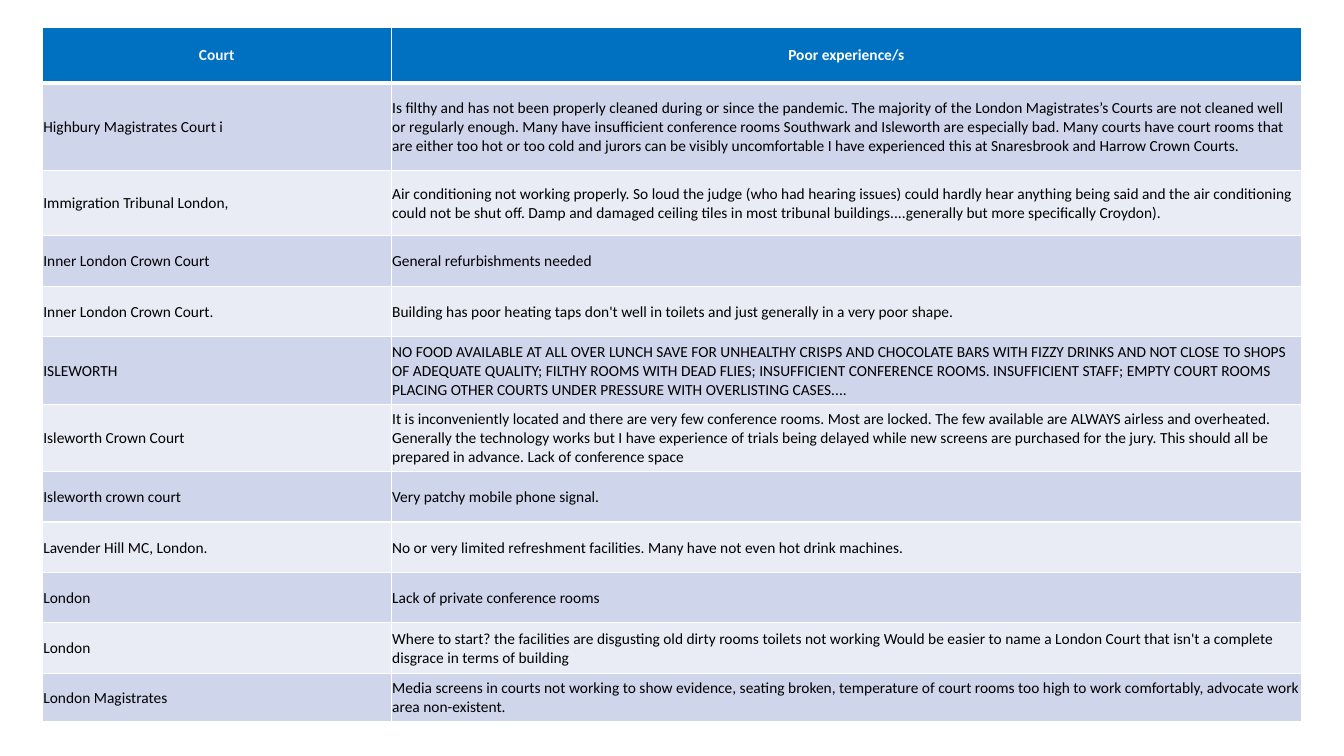
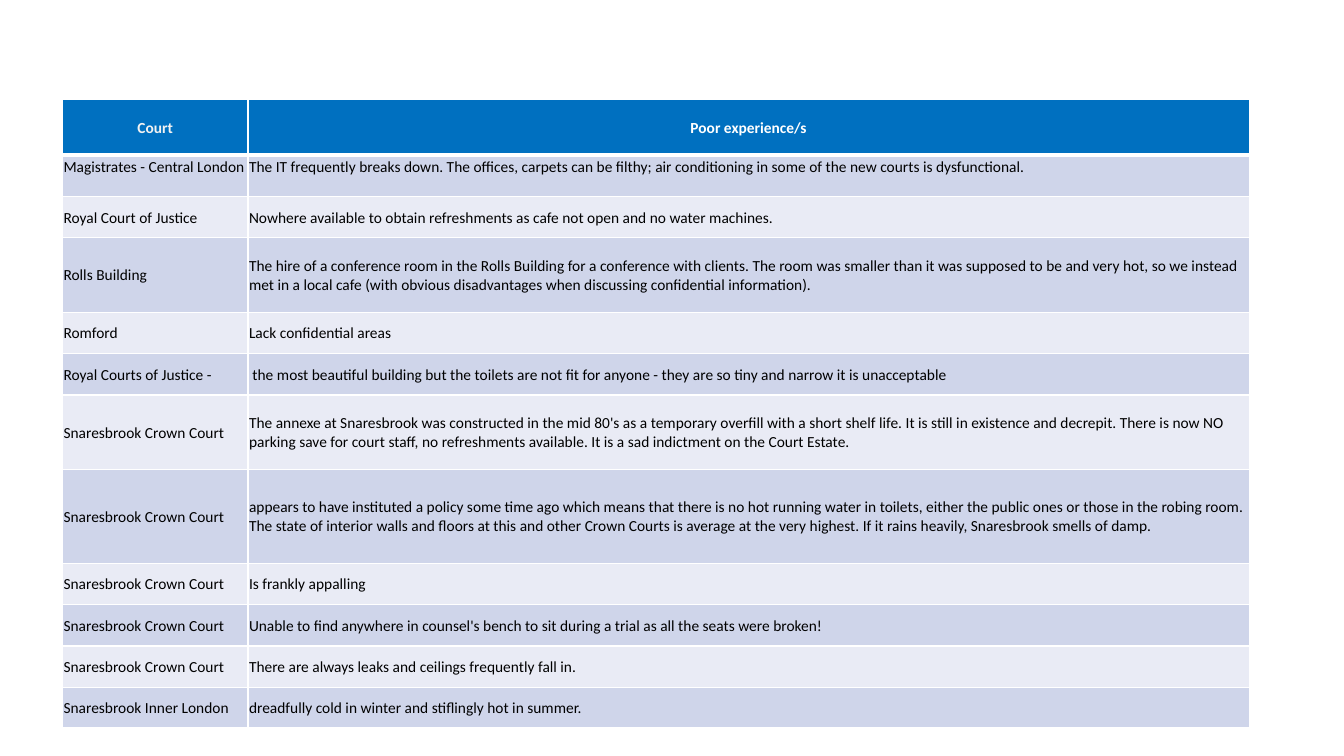
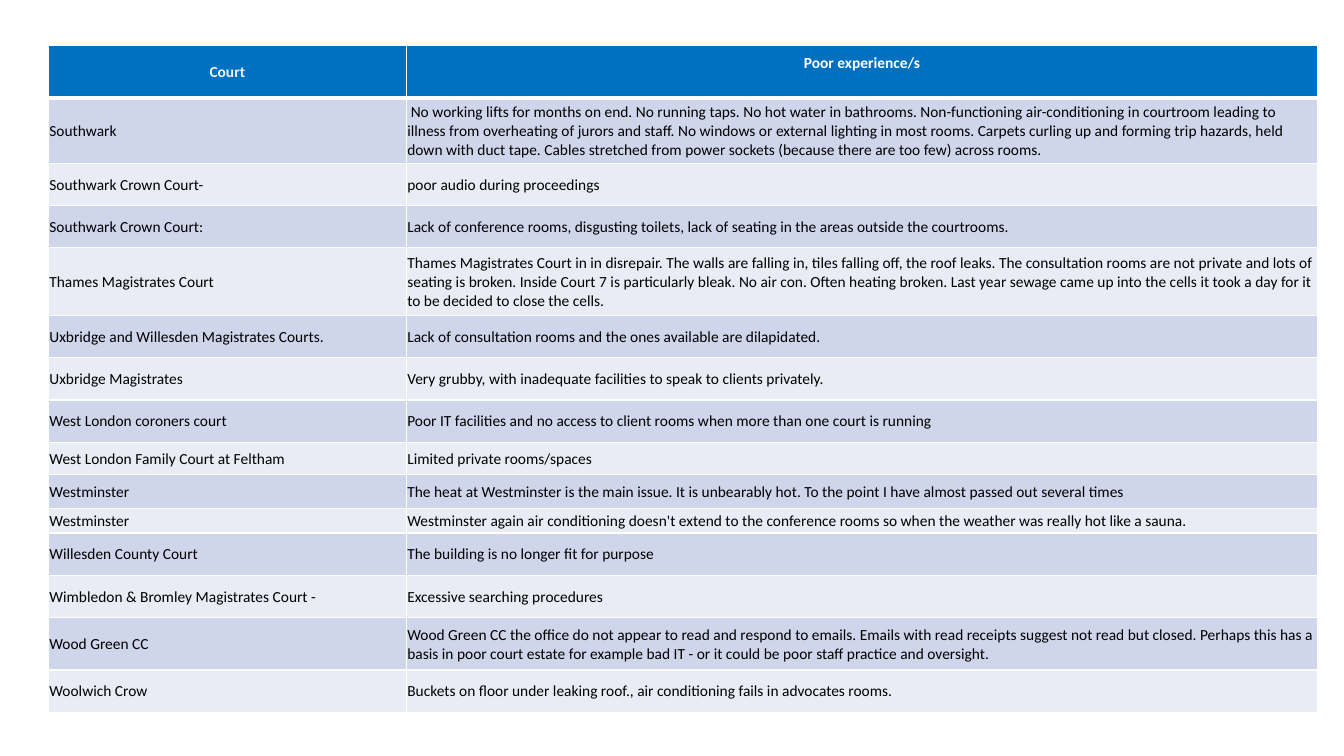
"""Build three slides that list poor experiences at London courts."""
from lxml import etree
from pptx import Presentation
from pptx import util as u
from pptx.dml.color import RGBColor
from pptx.enum import text
from pptx.oxml import ns

BLUE = RGBColor(0x00, 0x70, 0xC0)
DARK = RGBColor(0xCF, 0xD5, 0xEA)
LIGHT = RGBColor(0xE9, 0xEB, 0xF5)
WHITE = RGBColor(0xFF, 0xFF, 0xFF)
PALE = RGBColor(0xF2, 0xF2, 0xF2)
BLACK = RGBColor(0x00, 0x00, 0x00)
HEAD = ("Court", "Poor experience/s")

FIRST = [
    (0.87, "Highbury Magistrates Court i", "Is filthy and has not been properly cleaned during or since the pandemic. The majority of the London Magistrates’s Courts are not cleaned well or regularly enough. Many have insufficient conference rooms Southwark and Isleworth are especially bad. Many courts have court rooms that are either too hot or too cold and jurors can be visibly uncomfortable I have experienced this at Snaresbrook and Harrow Crown Courts."),
    (0.65, "Immigration Tribunal London,", "Air conditioning not working properly. So loud the judge (who had hearing issues) could hardly hear anything being said and the air conditioning could not be shut off. Damp and damaged ceiling tiles in most tribunal buildings....generally but more specifically Croydon)."),
    (0.5, "Inner London Crown Court", "General refurbishments needed"),
    (0.5, "Inner London Crown Court.", "Building has poor heating taps don't well in toilets and just generally in a very poor shape."),
    (0.67, "ISLEWORTH", "NO FOOD AVAILABLE AT ALL OVER LUNCH SAVE FOR UNHEALTHY CRISPS AND CHOCOLATE BARS WITH FIZZY DRINKS AND NOT CLOSE TO SHOPS OF ADEQUATE QUALITY; FILTHY ROOMS WITH DEAD FLIES; INSUFFICIENT CONFERENCE ROOMS. INSUFFICIENT STAFF; EMPTY COURT ROOMS PLACING OTHER COURTS UNDER PRESSURE WITH OVERLISTING CASES...."),
    (0.67, "Isleworth Crown Court", "It is inconveniently located and there are very few conference rooms. Most are locked. The few available are ALWAYS airless and overheated. Generally the technology works but I have experience of trials being delayed while new screens are purchased for the jury. This should all be prepared in advance. Lack of conference space"),
    (0.5, "Isleworth crown court", "Very patchy mobile phone signal."),
    (0.5, "Lavender Hill MC, London.", "No or very limited refreshment facilities. Many have not even hot drink machines."),
    (0.5, "London", "Lack of private conference rooms"),
    (0.5, "London", "Where to start? the facilities are disgusting old dirty rooms toilets not working Would be easier to name a London Court that isn't a complete disgrace in terms of building"),
    (0.48, "London Magistrates", "Media screens in courts not working to show evidence, seating broken, temperature of court rooms too high to work comfortably, advocate work area non-existent."),
]

SECOND = [
    (0.41, "Magistrates - Central London", "The IT frequently breaks down. The offices, carpets can be filthy; air conditioning in some of the new courts is dysfunctional."),
    (0.41, "Royal Court of Justice", "Nowhere available to obtain refreshments as cafe not open and no water machines."),
    (0.74, "Rolls Building", "The hire of a conference room in the Rolls Building for a conference with clients. The room was smaller than it was supposed to be and very hot, so we instead met in a local cafe (with obvious disadvantages when discussing confidential information)."),
    (0.41, "Romford", "Lack confidential areas"),
    (0.41, "Royal Courts of Justice -", " the most beautiful building but the toilets are not fit for anyone - they are so tiny and narrow it is unacceptable"),
    (0.74, "Snaresbrook Crown Court", "The annexe at Snaresbrook was constructed in the mid 80's as a temporary overfill with a short shelf life. It is still in existence and decrepit. There is now NO parking save for court staff, no refreshments available. It is a sad indictment on the Court Estate."),
    (0.93, "Snaresbrook Crown Court", "appears to have instituted a policy some time ago which means that there is no hot running water in toilets, either the public ones or those in the robing room. The state of interior walls and floors at this and other Crown Courts is average at the very highest. If it rains heavily, Snaresbrook smells of damp."),
    (0.41, "Snaresbrook Crown Court", "Is frankly appalling"),
    (0.41, "Snaresbrook Crown Court", "Unable to find anywhere in counsel's bench to sit during a trial as all the seats were broken!"),
    (0.41, "Snaresbrook Crown Court", "There are always leaks and ceilings frequently fall in."),
    (0.4, "Snaresbrook Inner London", "dreadfully cold in winter and stiflingly hot in summer."),
]

THIRD = [
    (0.65, "Southwark", " No working lifts for months on end. No running taps. No hot water in bathrooms. Non-functioning air-conditioning in courtroom leading to illness from overheating of jurors and staff. No windows or external lighting in most rooms. Carpets curling up and forming trip hazards, held down with duct tape. Cables stretched from power sockets (because there are too few) across rooms."),
    (0.42, "Southwark Crown Court-", "poor audio during proceedings"),
    (0.42, "Southwark Crown Court:", "Lack of conference rooms, disgusting toilets, lack of seating in the areas outside the courtrooms."),
    (0.67, "Thames Magistrates Court", "Thames Magistrates Court in in disrepair. The walls are falling in, tiles falling off, the roof leaks. The consultation rooms are not private and lots of seating is broken. Inside Court 7 is particularly bleak. No air con. Often heating broken. Last year sewage came up into the cells it took a day for it to be decided to close the cells."),
    (0.42, "Uxbridge and Willesden Magistrates Courts.", "Lack of consultation rooms and the ones available are dilapidated."),
    (0.42, "Uxbridge Magistrates", "Very grubby, with inadequate facilities to speak to clients privately."),
    (0.42, "West London coroners court", "Poor IT facilities and no access to client rooms when more than one court is running"),
    (0.32, "West London Family Court at Feltham", "Limited private rooms/spaces"),
    (0.34, "Westminster", "The heat at Westminster is the main issue. It is unbearably hot. To the point I have almost passed out several times"),
    (0.24, "Westminster", "Westminster again air conditioning doesn't extend to the conference rooms so when the weather was really hot like a sauna."),
    (0.42, "Willesden County Court", "The building is no longer fit for purpose"),
    (0.42, "Wimbledon & Bromley Magistrates Court -", "Excessive searching procedures"),
    (0.52, "Wood Green CC", "Wood Green CC the office do not appear to read and respond to emails. Emails with read receipts suggest not read but closed. Perhaps this has a basis in poor court estate for example bad IT - or it could be poor staff practice and oversight."),
    (0.42, "Woolwich Crow", "Buckets on floor under leaking roof., air conditioning fails in advocates rooms."),
]


class Deck:
    """Hold the style and the current slide."""

    font = "Calibri"
    size = u.Pt(11)
    inset = u.Inches(0.01)
    lift = u.Inches(0.18)

    def __init__(self):
        """Start an empty wide deck."""
        self.file = Presentation()
        self.file.slide_width = u.Inches(13.33)
        self.file.slide_height = u.Inches(7.5)
        self.slide = None

    def page(self):
        """Add a blank slide."""
        self.slide = self.file.slides.add_slide(self.file.slide_layouts[6])

    def edge(self, cell, side, width):
        """Draw one white cell border."""
        line = etree.SubElement(cell._tc.get_or_add_tcPr(), ns.qn(f"a:ln{side}"), w=str(u.Pt(width)))
        fill = etree.SubElement(line, ns.qn("a:solidFill"))
        etree.SubElement(fill, ns.qn("a:srgbClr"), val=str(WHITE))

    def cell(self, cell, words, row, col, raised):
        """Fill and format one table cell."""
        head = row == 0
        for side in "LRTB":
            thick = (row, side) in ((0, "B"), (1, "T"))
            self.edge(cell, side, 3 if thick else 1)
        cell.fill.solid()
        cell.fill.fore_color.rgb = BLUE if head else DARK if row % 2 else LIGHT
        cell.margin_left = cell.margin_right = cell.margin_top = self.inset
        cell.margin_bottom = self.lift if raised else 0
        cell.vertical_anchor = text.MSO_ANCHOR.MIDDLE
        para = cell.text_frame.paragraphs[0]
        para.text = words
        para.alignment = text.PP_ALIGN.CENTER if head else text.PP_ALIGN.LEFT
        font = para.runs[0].font
        font.name, font.size, font.bold = self.font, self.size, head
        font.color.rgb = (PALE, WHITE)[col] if head else BLACK

    def table(self, left, top, cols, high, body, raised=()):
        """Add a two-column table with a header row."""
        rows = [(high, *HEAD), *body]
        tall = sum(row[0] for row in rows)
        grid = self.slide.shapes.add_table(
            len(rows), len(cols), u.Inches(left), u.Inches(top),
            u.Inches(sum(cols)), u.Inches(tall)).table
        grid.horz_banding = False
        for col, width in zip(grid.columns, cols):
            col.width = u.Inches(width)
        for i, (height, *words) in enumerate(rows):
            grid.rows[i].height = u.Inches(height)
            for j, word in enumerate(words):
                self.cell(grid.cell(i, j), word, i, j, (i, j) in raised)


def main():
    """Build and save the deck."""
    deck = Deck()
    deck.page()
    deck.table(0.42, 0.27, (3.46, 9.03), 0.55, FIRST)
    deck.page()
    deck.table(0.62, 0.99, (1.84, 9.93), 0.55, SECOND, ((1, 0), (1, 1)))
    deck.page()
    deck.table(0.48, 0.45, (3.55, 9.04), 0.52, THIRD, ((0, 1),))
    deck.file.save("out.pptx")


if __name__ == "__main__":
    main()
